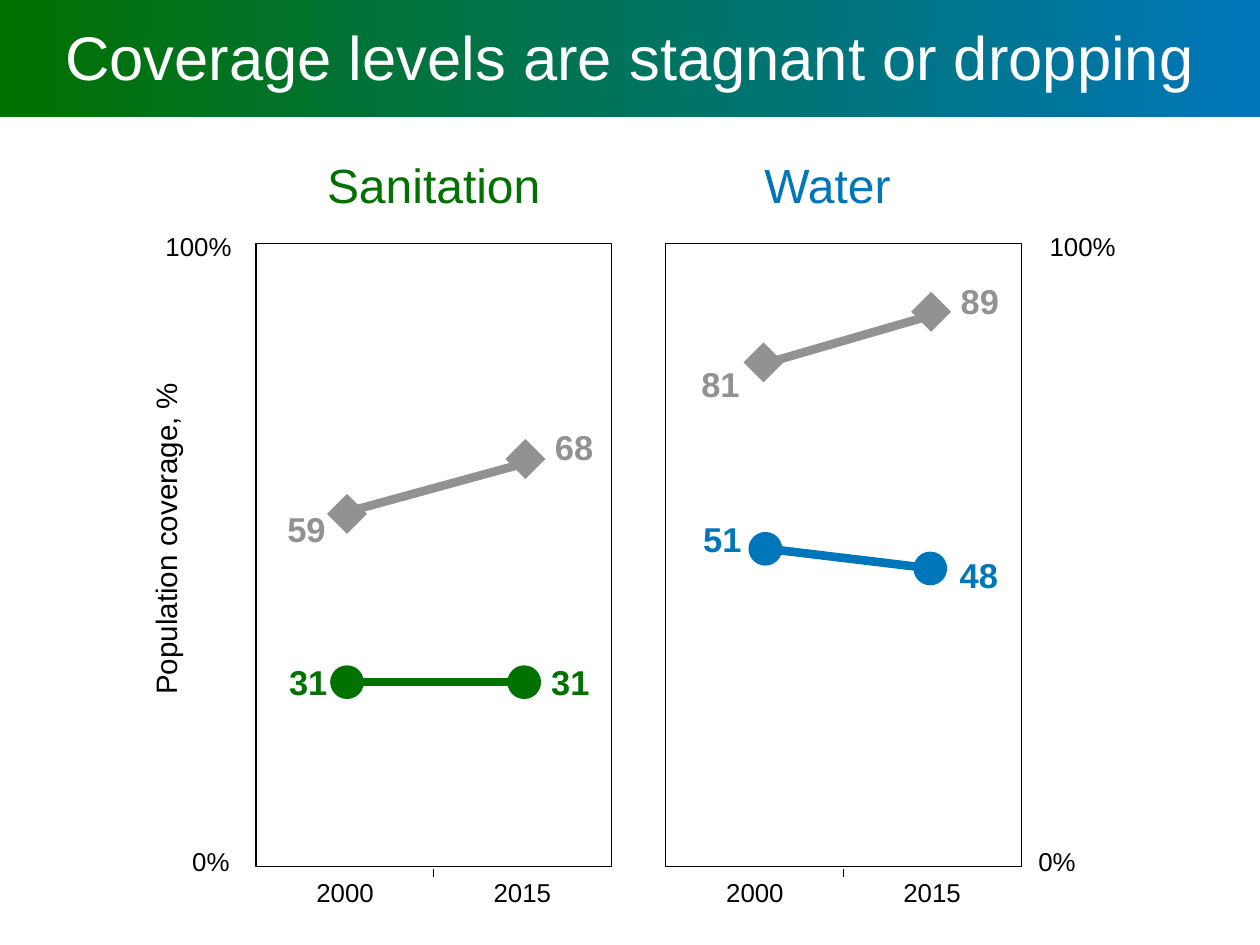
from lxml import etree
from pptx import Presentation
from pptx.dml.color import RGBColor
from pptx.enum.shapes import MSO_CONNECTOR, MSO_SHAPE
from pptx.enum.text import MSO_ANCHOR, MSO_AUTO_SIZE, PP_ALIGN
from pptx.oxml.ns import qn
from pptx.util import Pt

RECT = MSO_SHAPE.RECTANGLE
OVAL = MSO_SHAPE.OVAL
STRAIGHT = MSO_CONNECTOR.STRAIGHT
MIDDLE = MSO_ANCHOR.MIDDLE
CENTER = PP_ALIGN.CENTER
GROW = MSO_AUTO_SIZE.SHAPE_TO_FIT_TEXT

FONT = "Arial"
GREEN, BLUE, GREY = "017100", "0076BA", "929292"
BLACK, WHITE = "000000", "FFFFFF"

# Frames: top, width and height are shared
TOP, WIDTH, HEIGHT = 198, 289, 506

# Panels: heading, heading centre, heading width, colour, frame left
PANELS = [
    ("Sanitation", 352.5, 184, GREEN, 208),
    ("Water", 672.5, 111, BLUE, 541),
]

# Series: colour, marker, marker centres, line ends, values with centres
SERIES = [
    (BLUE, "dot", [(622, 446), (756, 462)], [(627, 446.4), (757, 462)],
     [("51", 587, 437.5), ("48", 795.5, 467.5)]),
    (GREEN, "dot", [(282, 554.4), (426, 554.4)],
     [(284, 554.4), (438, 554.4)],
     [("31", 250.5, 554), ("31", 463.5, 554)]),
    (GREY, "diamond", [(282, 417.6), (427, 373)],
     [(284.4, 415.4), (434, 374.4)],
     [("59", 249, 429.5), ("68", 466.5, 363)]),
    (GREY, "diamond", [(620.5, 294.5), (756.7, 253.4)],
     [(625, 294.5), (764, 254.2)],
     [("81", 585.5, 312), ("89", 796.3, 244.5)]),
]

# Scale labels: text, centre, width
SCALE = [
    ("100%", 161.3, 199.8, 65), ("0%", 171.4, 700.2, 42),
    ("100%", 879.8, 199.8, 65), ("0%", 859, 700.2, 42),
]


def color(code):
    return RGBColor.from_string(code)


def place(box, x, y, width, height):
    """Centre a box on a point."""
    box.left, box.top = Pt(x - width / 2), Pt(y - height / 2)
    box.width, box.height = Pt(width), Pt(height)


def write(box, text, size, code, bold=False):
    frame = box.text_frame
    frame.word_wrap = False
    frame.auto_size = GROW
    frame.vertical_anchor = MIDDLE
    frame.margin_left = frame.margin_right = Pt(4)
    frame.margin_top = frame.margin_bottom = Pt(4)
    line = frame.paragraphs[0]
    line.alignment = CENTER
    run = line.add_run()
    run.text = text
    run.font.name = FONT
    run.font.size = Pt(size)
    run.font.bold = bold
    run.font.color.rgb = color(code)


def add_label(shapes, text, x, y, width, height, size, code=BLACK,
              bold=False):
    box = shapes.add_textbox(0, 0, 0, 0)
    write(box, text, size, code, bold)
    place(box, x, y, width, height)
    return box


def add_line(shapes, start, end, code, weight):
    line = shapes.add_connector(STRAIGHT, *map(Pt, start + end))
    line.line.color.rgb = color(code)
    line.line.width = Pt(weight)
    etree.SubElement(line.element.spPr, qn("a:effectLst"))


def add_mark(shapes, kind, x, y, code):
    dot = kind == "dot"
    mark = shapes.add_shape(OVAL if dot else RECT, 0, 0, 0, 0)
    size = 27.4 if dot else 23
    place(mark, x, y, size, size)
    mark.rotation = 0 if dot else 315
    mark.shadow.inherit = False
    mark.fill.solid()
    mark.fill.fore_color.rgb = color(code)
    mark.line.fill.background()


def add_band(slide):
    band = slide.shapes.add_shape(RECT, Pt(-2), Pt(-5), Pt(1029), Pt(100))
    band.shadow.inherit = False
    band.line.fill.background()
    band.fill.gradient()
    band.fill.gradient_angle = 0
    for stop, code in zip(band.fill.gradient_stops, (GREEN, BLUE)):
        stop.color.rgb = color(code)
    # The band lies behind the title
    title = slide.shapes.title
    title.element.addprevious(band.element)
    write(title, "Coverage levels are stagnant or dropping", 50, WHITE)
    place(title, 512, 45, 930, 67)


def add_panel(shapes, name, x, width, code, left):
    add_label(shapes, name, x, 149.5, width, 53, 39, code)
    frame = shapes.add_shape(RECT, Pt(left), Pt(TOP), Pt(WIDTH), Pt(HEIGHT))
    frame.shadow.inherit = False
    frame.fill.background()
    frame.line.color.rgb = color(BLACK)
    frame.line.width = Pt(1)
    # Tick and years below the frame
    mid = left + WIDTH / 2
    add_line(shapes, (mid, 713), (mid, 706.5), BLACK, 1)
    for year, shift in (("2000", -72), ("2015", 72)):
        add_label(shapes, year, mid + shift, 725.4, 55, 32, 21)


def add_series(shapes, code, kind, marks, ends, values):
    group = shapes.add_group_shape().shapes
    add_line(group, *ends, code, 7)
    for x, y in marks:
        add_mark(group, kind, x, y, code)
    for text, x, y in values:
        add_label(group, text, x, y, 40, 41, 28, code, True)


def main():
    deck = Presentation()
    deck.slide_width, deck.slide_height = Pt(1024), Pt(768)
    slide = deck.slides.add_slide(deck.slide_layouts[5])
    shapes = slide.shapes

    # Title
    add_band(slide)

    # Panels and scale
    for panel in PANELS:
        add_panel(shapes, *panel)
    for text, x, y, width in SCALE:
        add_label(shapes, text, x, y, width, 32, 21)
    axis = add_label(shapes, "Population coverage, %", 134.3, 437.8,
                     267, 36, 24)
    axis.rotation = 270

    # Data
    for series in SERIES:
        add_series(shapes, *series)

    deck.save("out.pptx")


if __name__ == "__main__":
    main()
